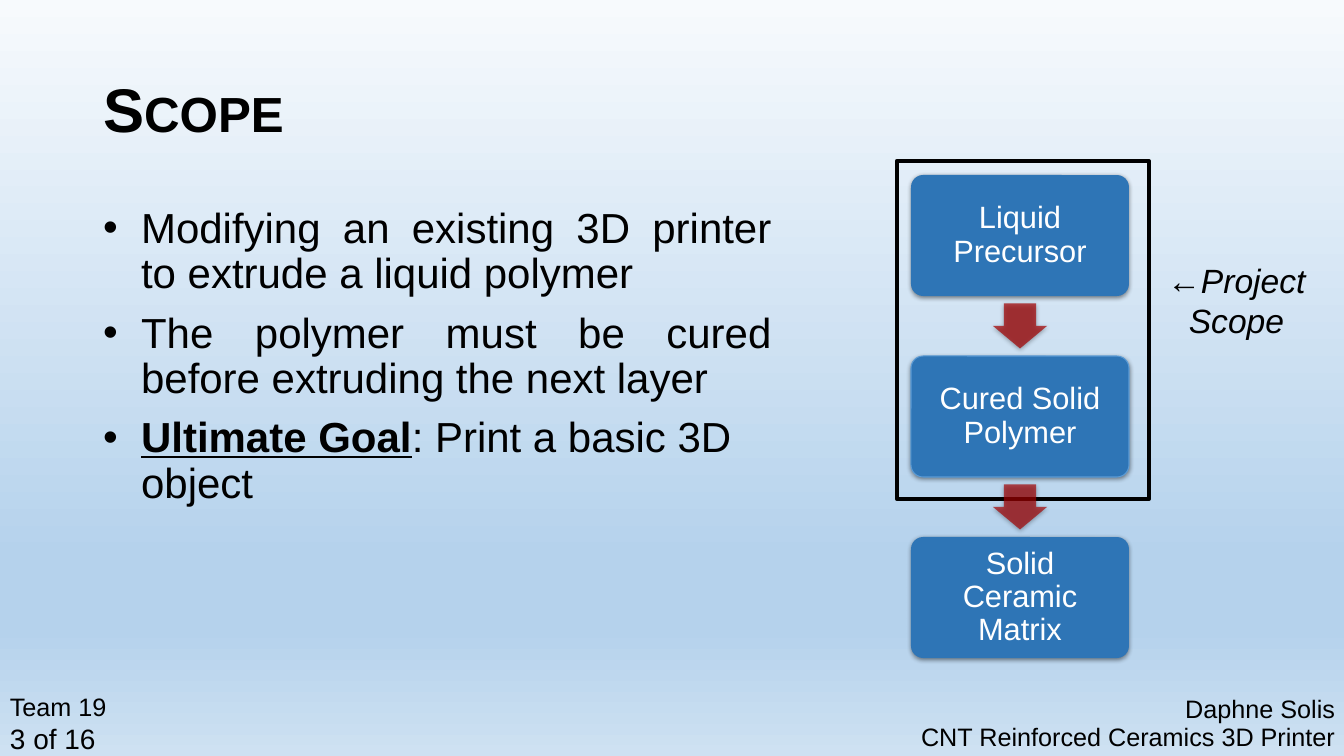
from lxml import etree
from pptx import Presentation
from pptx.dml.color import RGBColor
from pptx.enum.shapes import MSO_SHAPE as Shape
from pptx.enum.text import MSO_ANCHOR as Anchor, MSO_AUTO_SIZE as AutoSize, PP_ALIGN as Align
from pptx.oxml.ns import qn
from pptx.util import Pt

PX = 914400 / 100.8
FONT = "Arial"
BACKGROUND = [(0, "F7FAFD"), (74, "B5D2EC"), (83, "B5D2EC"), (100, "CEE1F2")]
TITLE = "Scope"
BULLETS = [
    (Align.JUSTIFY, "", "Modifying an existing 3D printer to extrude a liquid polymer"),
    (Align.JUSTIFY, "", "The polymer must be cured before extruding the next layer"),
    (Align.LEFT, "Ultimate Goal", ": Print a basic 3D object"),
]
LABELS = [
    ("3 of 16", (0, 720, 159, 36), 20, Align.LEFT, Anchor.MIDDLE, False),
    ("Team 19", (0, 686, 122, 41), 18, Align.LEFT, Anchor.TOP, False),
    ("CNT Reinforced Ceramics 3D Printer", (855, 716, 490, 40), 18, Align.RIGHT, Anchor.TOP, False),
    ("Daphne Solis", (999, 688, 346, 40), 18, Align.RIGHT, Anchor.TOP, False),
    ("←Project Scope", (1150, 255, 173, 92), 24, Align.CENTER, Anchor.TOP, True),
]
SCOPE_FRAME = (897, 161, 252, 338)
STAGES = [("Liquid Precursor", None), ("Cured Solid Polymer", "5B9BD5"), ("Solid Ceramic Matrix", None)]
ARROW_OPACITY = [70, 68]
STAGE_LEFT, STAGE_TOP, STAGE_WIDTH, STAGE_HEIGHT, STAGE_STEP = 911, 175, 218, 121, 181
ARROW_WIDTH, ARROW_HEIGHT = 45, 54


def px(value):
    return round(value * PX)


def box(bounds):
    return [px(value) for value in bounds]


def color(value):
    return RGBColor.from_string(value)


def add_xml(parent, tag, **attributes):
    return etree.SubElement(parent, qn(tag), {key: str(value) for key, value in attributes.items()})


def style(font, size, value="000000"):
    font.name, font.size = FONT, Pt(size)
    font.color.rgb = color(value)


def place(shape, bounds):
    shape.left, shape.top, shape.width, shape.height = box(bounds)
    shape.text_frame.auto_size = AutoSize.NONE


def add_shape(slide, kind, bounds, fill=None, line=None, line_width=0.75):
    shape = slide.shapes.add_shape(kind, *box(bounds))
    shape.shadow.inherit = False
    if fill:
        shape.fill.solid()
        shape.fill.fore_color.rgb = color(fill)
    else:
        shape.fill.background()
    if line:
        shape.line.color.rgb = color(line)
        shape.line.width = Pt(line_width)
    else:
        shape.line.fill.background()
    return shape


def add_shadow(shape):
    effects = shape.element.spPr.find(qn("a:effectLst"))
    shadow = add_xml(effects, "a:outerShdw", blurRad=Pt(3.5), dist=Pt(1.1), dir=5400000, rotWithShape=0)
    add_xml(add_xml(shadow, "a:srgbClr", val="000000"), "a:alpha", val=45000)


def paint_background(slide):
    fill = slide.background.fill
    fill.gradient()
    fill.gradient_angle = 270
    stops = next(slide.element.iter(qn("a:gsLst")))
    for stop in list(stops):
        stops.remove(stop)
    for position, value in BACKGROUND:
        add_xml(add_xml(stops, "a:gs", pos=position * 1000), "a:srgbClr", val=value)


def add_title(slide):
    title = slide.shapes.title
    place(title, (93, 40, 1159, 146))
    title.text_frame.text = TITLE
    title.text_frame.vertical_anchor = Anchor.MIDDLE
    paragraph = title.text_frame.paragraphs[0]
    paragraph.alignment, paragraph.line_spacing = Align.LEFT, 0.9
    run = paragraph.runs[0]
    style(run.font, 44)
    run.font.bold = True
    run.font._element.set("cap", "small")


def add_bullets(slide):
    body = slide.placeholders[1]
    place(body, (93, 202, 689, 480))
    frame = body.text_frame
    for index, (alignment, lead, text) in enumerate(BULLETS):
        paragraph = frame.add_paragraph() if index else frame.paragraphs[0]
        properties = paragraph._p.get_or_add_pPr()
        properties.set("marL", str(px(38)))
        properties.set("indent", str(px(-38)))
        add_xml(properties, "a:buFont", typeface=FONT)
        add_xml(properties, "a:buChar", char="•")
        paragraph.alignment, paragraph.line_spacing = alignment, 0.9
        paragraph.space_before = Pt(10 if index else 0)
        for part in filter(None, (lead, text)):
            run = paragraph.add_run()
            run.text = part
            style(run.font, 30)
            run.font.bold = run.font.underline = part == lead


def add_label(slide, text, bounds, size, alignment, anchor, italic):
    frame = slide.shapes.add_textbox(*box(bounds)).text_frame
    frame.word_wrap = True
    frame.vertical_anchor = anchor
    frame.text = text
    paragraph = frame.paragraphs[0]
    paragraph.alignment = alignment
    style(paragraph.runs[0].font, size)
    paragraph.runs[0].font.italic = italic


def add_stage(slide, top, text, line):
    bounds = (STAGE_LEFT, top, STAGE_WIDTH, STAGE_HEIGHT)
    stage = add_shape(slide, Shape.ROUNDED_RECTANGLE, bounds, "2E75B6", line)
    stage.adjustments[0] = 0.1
    add_shadow(stage)
    frame = stage.text_frame
    frame.margin_left = frame.margin_right = frame.margin_top = frame.margin_bottom = px(12)
    frame.word_wrap = True
    frame.vertical_anchor = Anchor.MIDDLE
    frame.text = text
    paragraph = frame.paragraphs[0]
    paragraph.alignment, paragraph.line_spacing = Align.CENTER, 0.9
    style(paragraph.runs[0].font, 22, "FFFFFF")


def add_arrow(slide, stage_top, opacity):
    middle = stage_top + (STAGE_HEIGHT + STAGE_STEP) / 2
    left = STAGE_LEFT + (STAGE_WIDTH - ARROW_WIDTH) / 2
    bounds = (left, middle - ARROW_HEIGHT / 2, ARROW_WIDTH, ARROW_HEIGHT)
    arrow = add_shape(slide, Shape.RIGHT_ARROW, bounds, "A40000")
    arrow.rotation = 90
    arrow.adjustments[0], arrow.adjustments[1] = 0.6, 0.5
    fill = arrow.element.spPr.find(qn("a:solidFill"))
    add_xml(fill[0], "a:alpha", val=opacity * 1000)
    add_shadow(arrow)


def main():
    presentation = Presentation()
    presentation.slide_width, presentation.slide_height = px(1344), px(756)
    slide = presentation.slides.add_slide(presentation.slide_layouts[1])
    paint_background(slide)
    add_title(slide)
    add_bullets(slide)
    add_shape(slide, Shape.RECTANGLE, SCOPE_FRAME, line="000000", line_width=3)
    for label in LABELS:
        add_label(slide, *label)
    for index, (text, line) in enumerate(STAGES):
        top = STAGE_TOP + index * STAGE_STEP
        add_stage(slide, top, text, line)
        if index < len(ARROW_OPACITY):
            add_arrow(slide, top, ARROW_OPACITY[index])
    presentation.save("out.pptx")


if __name__ == "__main__":
    main()
